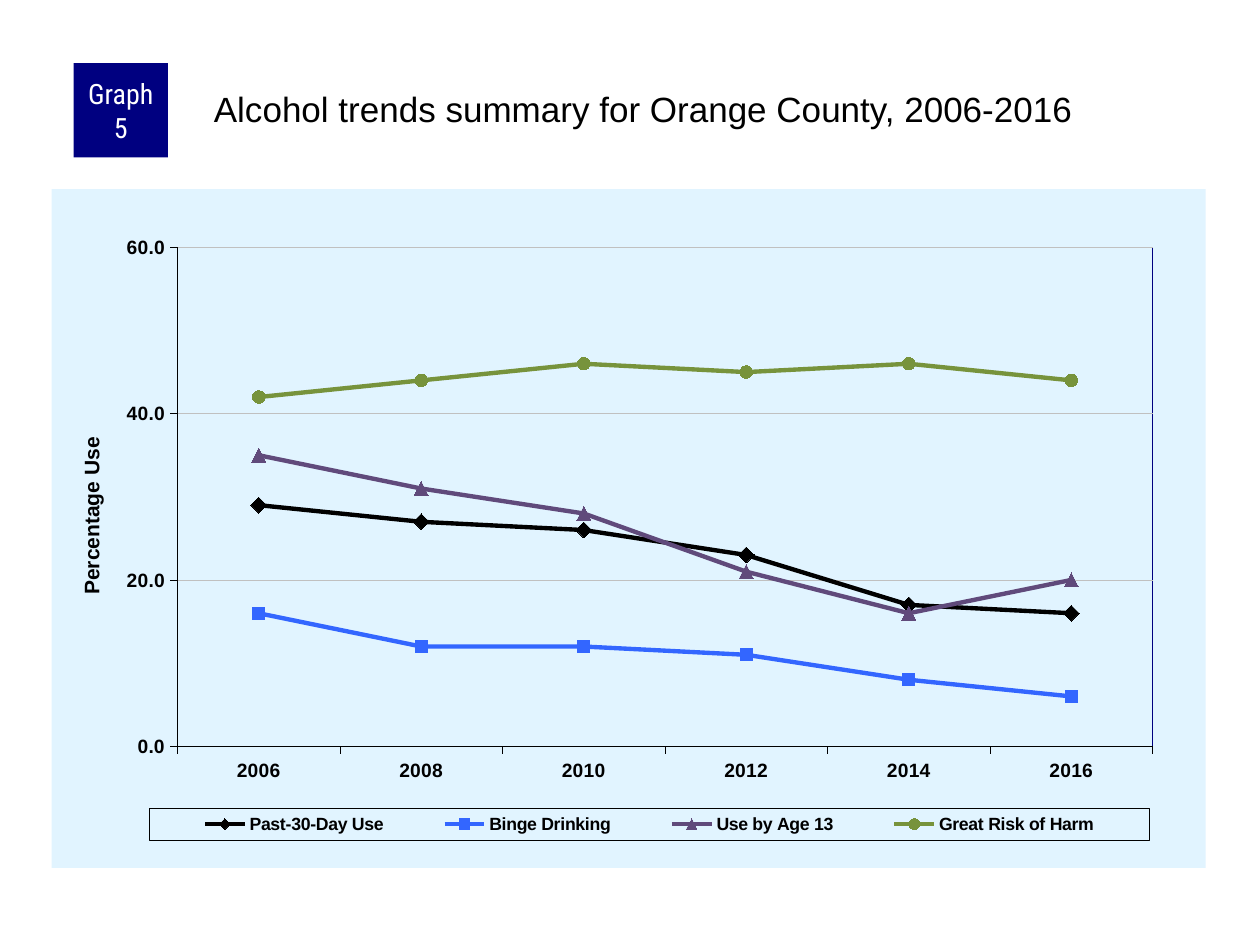
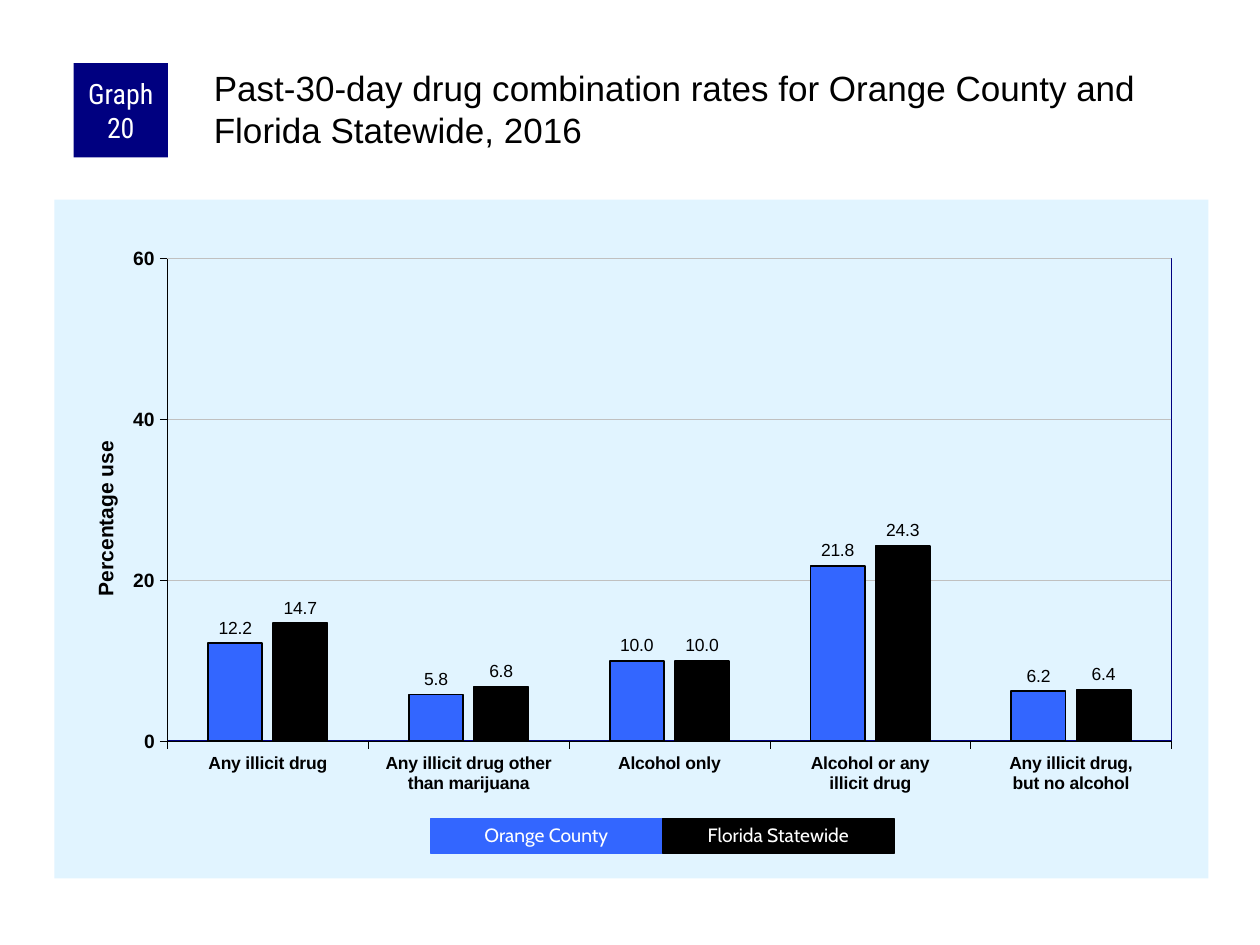
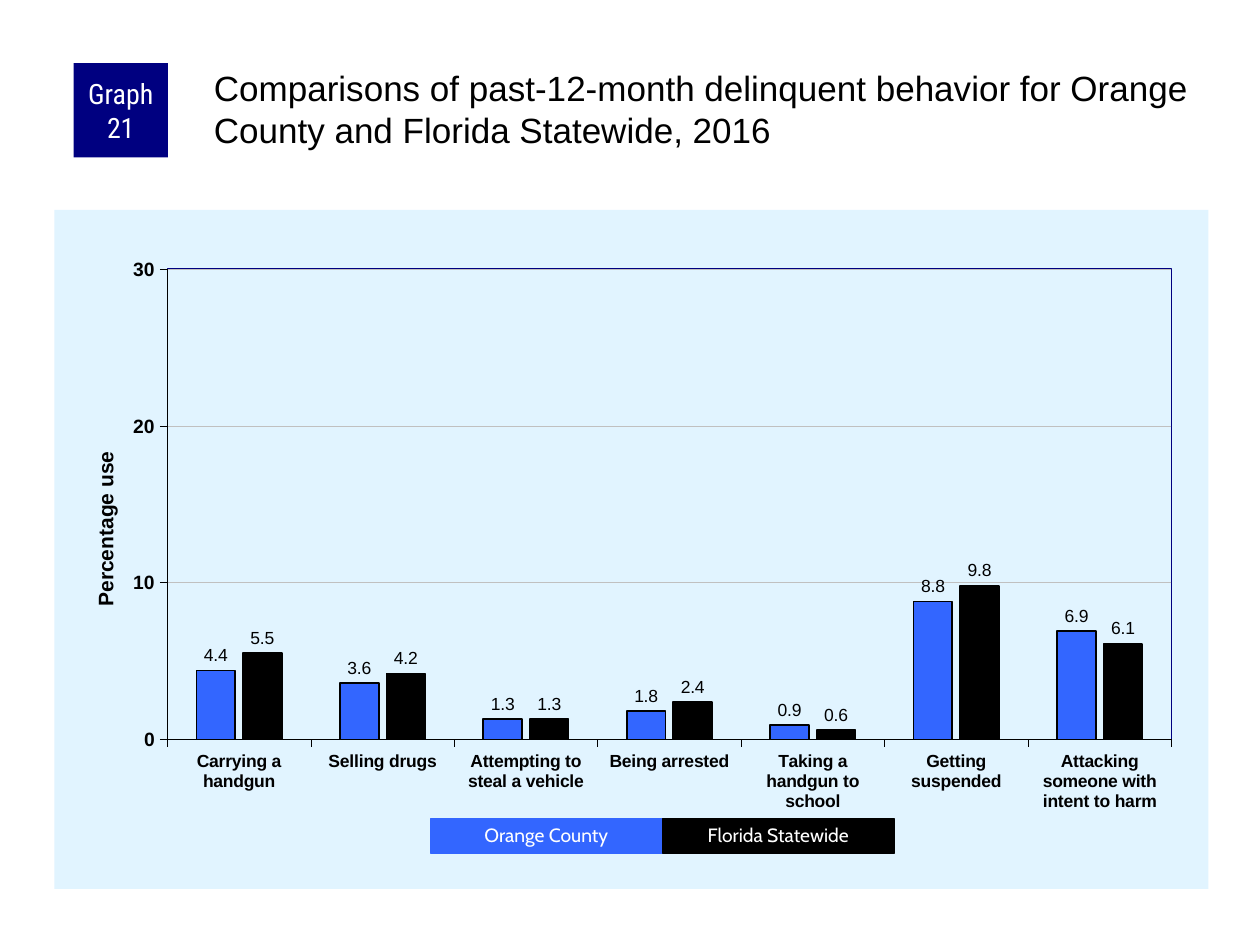
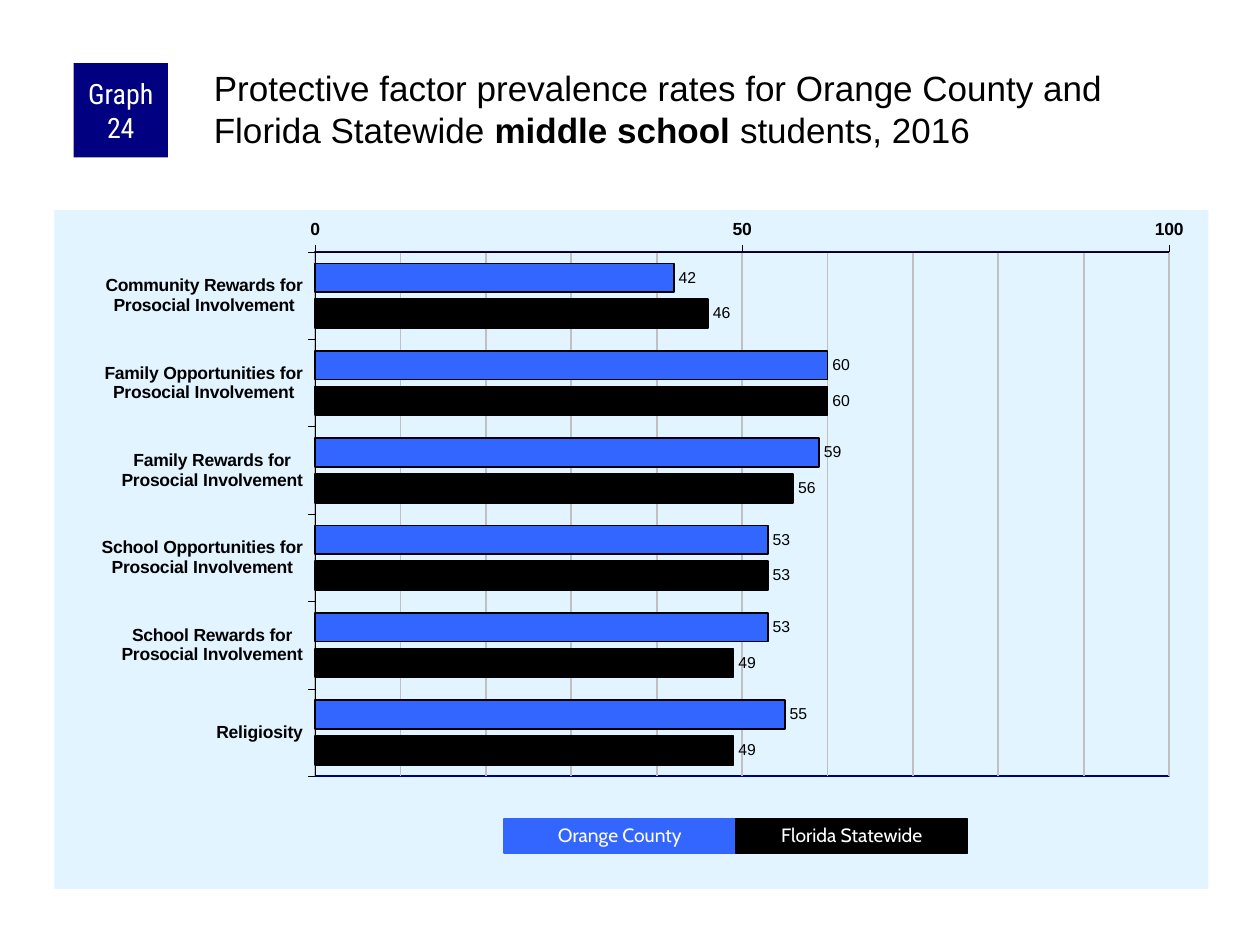
from dataclasses import dataclass
from typing import Optional

from lxml import etree
from pptx import Presentation
from pptx.chart.data import CategoryChartData
from pptx.dml.color import RGBColor
from pptx.enum.chart import (XL_AXIS_CROSSES, XL_CHART_TYPE, XL_LABEL_POSITION,
                             XL_LEGEND_POSITION, XL_MARKER_STYLE, XL_TICK_MARK)
from pptx.enum.shapes import MSO_SHAPE
from pptx.enum.text import MSO_ANCHOR, MSO_AUTO_SIZE, PP_ALIGN
from pptx.oxml import parse_xml
from pptx.oxml.ns import nsdecls, qn
from pptx.util import Pt

LINE, COLUMN, BAR = (XL_CHART_TYPE.LINE_MARKERS, XL_CHART_TYPE.COLUMN_CLUSTERED,
                     XL_CHART_TYPE.BAR_CLUSTERED)
DIAMOND, SQUARE, TRIANGLE, CIRCLE = (XL_MARKER_STYLE.DIAMOND, XL_MARKER_STYLE.SQUARE,
                                     XL_MARKER_STYLE.TRIANGLE, XL_MARKER_STYLE.CIRCLE)
TICK_OUT, TICK_NONE = XL_TICK_MARK.OUTSIDE, XL_TICK_MARK.NONE
OUTSIDE_END = XL_LABEL_POSITION.OUTSIDE_END
LEGEND_BOTTOM = XL_LEGEND_POSITION.BOTTOM
AXIS_MAXIMUM = XL_AXIS_CROSSES.MAXIMUM
RECTANGLE = MSO_SHAPE.RECTANGLE
LEFT, CENTER = PP_ALIGN.LEFT, PP_ALIGN.CENTER
TOP, MIDDLE = MSO_ANCHOR.TOP, MSO_ANCHOR.MIDDLE
NO_FIT, GROW = MSO_AUTO_SIZE.NONE, MSO_AUTO_SIZE.SHAPE_TO_FIT_TEXT
TITLE_ONLY = 5


# Colours, fonts and type sizes
@dataclass(frozen=True)
class Theme:
    navy: str = "000080"
    county: str = "3366FF"
    black: str = "000000"
    white: str = "FFFFFF"
    panel: str = "E1F4FF"
    grid: str = "C0C0C0"
    purple: str = "604A7B"
    green: str = "77933C"
    body_font: str = "Arial"
    badge_font: str = "Roboto Condensed"
    key_font: str = "Cabin"
    title_size: float = 20
    badge_size: float = 16
    key_size: float = 11
    axis_title_size: float = 12
    legend_size: float = 10.1


THEME = Theme()


# What a slide is made of
@dataclass(frozen=True)
class Box:
    left: float
    top: float
    width: float
    height: float

    def lengths(self) -> tuple:
        return Pt(self.left), Pt(self.top), Pt(self.width), Pt(self.height)


@dataclass(frozen=True)
class Series:
    name: str
    values: tuple
    color: str
    marker: Optional[XL_MARKER_STYLE] = None
    marker_size: int = 0


@dataclass(frozen=True)
class Graph:
    kind: XL_CHART_TYPE
    box: Box
    plot: tuple                      # x, y, width, height as shares of the chart
    categories: tuple
    series: tuple
    maximum: float
    major: float
    base_size: float = 11.5
    minor: Optional[float] = None
    axis_title: str = ""
    axis_title_at: tuple = (0.03, 0.35)
    axis_format: str = "General"
    category_size: float = 10
    value_size: float = 11
    grid_width: float = 0.25
    gap: int = 150
    overlap: int = -20
    label_format: str = "0.0"
    label_size: float = 10


@dataclass(frozen=True)
class GraphSlide:
    number: int
    title: tuple                     # (text, bold) runs
    graph: Graph
    title_top: float = 36
    key_left: Optional[float] = None


BADGE = Box(42, 36, 54, 54)
KEY_TOP, KEY_WIDTH, KEY_HEIGHT = 468, 132.5, 19.5
LEGEND_PLACE = (0.085, 0.912, 0.866, 0.047)


def chart_box(left: float, top: float) -> Box:
    return Box(left, top, 659.5, 388)


def county_and_state(county: tuple, state: tuple) -> tuple:
    return (Series("Series 1", county, THEME.county),
            Series("Series 2", state, THEME.black))


SLIDES = (
    GraphSlide(
        5, (("Alcohol trends summary for Orange County, 2006-2016", False),),
        Graph(LINE, chart_box(29.5, 108), (0.109, 0.086, 0.845, 0.735),
              ("2006", "2008", "2010", "2012", "2014", "2016"),
              (Series("Past-30-Day Use", (29, 27, 26, 23, 17, 16), THEME.black, DIAMOND, 9),
               Series("Binge Drinking", (16, 12, 12, 11, 8, 6), THEME.county, SQUARE, 7),
               Series("Use by Age 13", (35, 31, 28, 21, 16, 20), THEME.purple, TRIANGLE, 8),
               Series("Great Risk of Harm", (42, 44, 46, 45, 46, 44), THEME.green, CIRCLE, 7)),
              maximum=60, major=20, base_size=8, axis_title="Percentage Use",
              axis_title_at=(0.02, 0.36), axis_format="0.0", category_size=11),
        title_top=48),
    GraphSlide(
        20, (("Past-30-day drug combination rates for Orange County and "
              "Florida Statewide, 2016", False),),
        Graph(COLUMN, chart_box(31, 114), (0.098, 0.087, 0.87, 0.711),
              ("Any illicit drug", "Any illicit drug other than marijuana", "Alcohol only",
               "Alcohol or any\nillicit drug", "Any illicit drug,\nbut no alcohol"),
              county_and_state((12.2, 5.8, 10, 21.8, 6.2), (14.7, 6.8, 10, 24.3, 6.4)),
              maximum=60, major=20, axis_title="Percentage use"),
        key_left=246),
    GraphSlide(
        21, (("Comparisons of past-12-month delinquent behavior for Orange County and "
              "Florida Statewide, 2016", False),),
        Graph(COLUMN, chart_box(31, 120), (0.098, 0.087, 0.87, 0.693),
              ("Carrying a handgun", "Selling drugs", "Attempting to steal a vehicle",
               "Being arrested", "Taking a handgun to school", "Getting suspended",
               "Attacking someone with intent to harm"),
              county_and_state((4.4, 3.6, 1.3, 1.8, 0.9, 8.8, 6.9),
                               (5.5, 4.2, 1.3, 2.4, 0.6, 9.8, 6.1)),
              maximum=30, major=10, axis_title="Percentage use"),
        key_left=246),
    GraphSlide(
        24, (("Protective factor prevalence rates for Orange County and Florida Statewide ", False),
             ("middle school ", True), ("students, 2016", False)),
        Graph(BAR, chart_box(31, 120), (0.226, 0.062, 0.74, 0.772),
              ("Community Rewards for\nProsocial Involvement",
               "Family Opportunities for\nProsocial Involvement",
               "Family Rewards for\nProsocial Involvement",
               "School Opportunities for\nProsocial Involvement",
               "School Rewards for\nProsocial Involvement", "Religiosity"),
              county_and_state((42, 60, 59, 53, 53, 55), (46, 60, 56, 53, 49, 49)),
              maximum=100, major=50, minor=10, base_size=11.8, value_size=10,
              grid_width=1, gap=80, overlap=-25, label_format="0", label_size=9),
        key_left=288),
)


# Text and shapes
def style_font(font, size: float, color: str = THEME.black, *,
               name: str = THEME.body_font, bold: bool = False) -> None:
    font.size, font.name, font.bold = Pt(size), name, bold
    font.color.rgb = RGBColor.from_string(color)


def write_text(frame, runs: tuple, *, size: float, color: str = THEME.black,
               font: str = THEME.body_font, align: PP_ALIGN = LEFT,
               anchor: MSO_ANCHOR = TOP, insets: tuple = (7.2, 3.6, 7.2, 3.6),
               spacing: float = 1.0, fit: MSO_AUTO_SIZE = NO_FIT) -> None:
    frame.word_wrap, frame.auto_size, frame.vertical_anchor = True, fit, anchor
    (frame.margin_left, frame.margin_top,
     frame.margin_right, frame.margin_bottom) = (Pt(inset) for inset in insets)
    paragraph = frame.paragraphs[0]
    paragraph.alignment, paragraph.line_spacing = align, spacing
    for text, bold in runs:
        run = paragraph.add_run()
        run.text = text
        style_font(run.font, size, color, name=font, bold=bold)


def set_line(line, color: str, width: float) -> None:
    line.color.rgb = RGBColor.from_string(color)
    line.width = Pt(width)


def set_fill(fill, color: str) -> None:
    fill.solid()
    fill.fore_color.rgb = RGBColor.from_string(color)


def add_block(slide, box: Box, fill: str, outlined: bool = False):
    block = slide.shapes.add_shape(RECTANGLE, *box.lengths())
    block.shadow.inherit = False
    set_fill(block.fill, fill)
    if outlined:
        set_line(block.line, fill, 0.75)
    else:
        block.line.fill.background()
    return block


def add_heading(slide, content: GraphSlide) -> None:
    badge = add_block(slide, BADGE, THEME.navy)
    write_text(badge.text_frame, ((f"Graph {content.number}", False),), size=THEME.badge_size,
               color=THEME.white, font=THEME.badge_font, align=CENTER, anchor=MIDDLE,
               insets=(3.6, 0, 3.6, 0))
    title = slide.shapes.title
    title.left, title.top, title.width, title.height = Box(
        120, content.title_top, 570, 60).lengths()
    write_text(title.text_frame, content.title, size=THEME.title_size, insets=(2.2, 2.2, 0, 0))


def add_key(slide, left: float) -> None:
    entries = (("Orange County", THEME.county), ("Florida Statewide", THEME.black))
    for index, (label, color) in enumerate(entries):
        entry = add_block(slide, Box(left + index * KEY_WIDTH, KEY_TOP, KEY_WIDTH, KEY_HEIGHT),
                          color, outlined=True)
        write_text(entry.text_frame, ((label, False),), size=THEME.key_size, color=THEME.white,
                   font=THEME.key_font, align=CENTER, anchor=MIDDLE, spacing=0.9, fit=GROW)


# Chart XML that has no public method
def set_layout(parent, index: int, place: tuple, inner: bool = False) -> None:
    previous = parent.find(qn("c:layout"))
    if previous is not None:
        parent.remove(previous)
    layout = parse_xml(f"<c:layout {nsdecls('c')}><c:manualLayout/></c:layout>")
    settings = [("layoutTarget", "inner")] if inner else []
    settings += [("xMode", "edge"), ("yMode", "edge"), *zip("xywh", place)]
    for tag, value in settings:
        etree.SubElement(layout[0], qn(f"c:{tag}")).set("val", str(value))
    parent.insert(index, layout)


def frame_format(fill: Optional[str], line: Optional[str], width: float = 1):
    def paint(color: Optional[str]) -> str:
        return (f'<a:solidFill><a:srgbClr val="{color}"/></a:solidFill>'
                if color else "<a:noFill/>")
    return parse_xml(f'<c:spPr {nsdecls("c", "a")}>{paint(fill)}'
                     f'<a:ln w="{int(Pt(width))}">{paint(line)}</a:ln></c:spPr>')


# Chart parts
def format_axis(axis, size: float) -> None:
    axis.major_tick_mark, axis.minor_tick_mark = TICK_OUT, TICK_NONE
    style_font(axis.tick_labels.font, size, bold=True)
    set_line(axis.format.line, THEME.black, 0.25)


def format_value_axis(axis, graph: Graph) -> None:
    format_axis(axis, graph.value_size)
    axis.minimum_scale, axis.maximum_scale, axis.major_unit = 0, graph.maximum, graph.major
    axis.tick_labels.number_format = graph.axis_format
    axis.tick_labels.number_format_is_linked = False
    axis.has_major_gridlines = True
    set_line(axis.major_gridlines.format.line, THEME.grid, graph.grid_width)
    if graph.minor:
        axis.minor_unit = graph.minor
        axis.has_minor_gridlines = True
        minor_gridlines = axis._element.find(qn("c:minorGridlines"))
        minor_gridlines.append(frame_format(None, THEME.grid, graph.grid_width))
    axis.has_title = bool(graph.axis_title)
    if graph.axis_title:
        run = axis.axis_title.text_frame.paragraphs[0].add_run()
        run.text = graph.axis_title
        style_font(run.font, THEME.axis_title_size, bold=True)
        set_layout(axis.axis_title._element, 1, graph.axis_title_at)


def format_lines(chart, graph: Graph) -> None:
    for line, series in zip(chart.plots[0].series, graph.series):
        line.smooth = False
        set_line(line.format.line, series.color, 2.5)
        line.marker.style, line.marker.size = series.marker, series.marker_size
        set_fill(line.marker.format.fill, series.color)
        set_line(line.marker.format.line, series.color, 0.75)
    chart.has_legend = True
    legend = chart.legend
    legend.position, legend.include_in_layout = LEGEND_BOTTOM, False
    style_font(legend.font, THEME.legend_size, bold=True)
    set_layout(legend._element, 1, LEGEND_PLACE)
    legend._element.find(qn("c:txPr")).addprevious(frame_format(None, THEME.black, 0.25))


def format_bars(chart, graph: Graph) -> None:
    plot = chart.plots[0]
    plot.gap_width, plot.overlap = graph.gap, graph.overlap
    for bars, series in zip(plot.series, graph.series):
        bars.invert_if_negative = False
        set_fill(bars.format.fill, series.color)
        set_line(bars.format.line, THEME.black, 1)
        labels = bars.data_labels
        labels.show_value, labels.position = True, OUTSIDE_END
        labels.number_format, labels.number_format_is_linked = graph.label_format, False
        style_font(labels.font, graph.label_size)


def add_graph(slide, graph: Graph) -> None:
    data = CategoryChartData()
    data.categories = graph.categories
    for series in graph.series:
        data.add_series(series.name, series.values)
    chart = slide.shapes.add_chart(graph.kind, *graph.box.lengths(), data).chart
    chart.has_title = chart.has_legend = False
    style_font(chart.font, graph.base_size)
    chart.plots[0].vary_by_categories = False

    # Pale panel behind the chart, navy frame around the plot
    chart_part = chart._chartSpace.find(qn("c:chart"))
    chart_part.addnext(frame_format(THEME.panel, None))
    plot_area = chart_part.find(qn("c:plotArea"))
    set_layout(plot_area, 0, graph.plot, inner=True)
    plot_area.append(frame_format(None, THEME.navy))

    format_axis(chart.category_axis, graph.category_size)
    format_value_axis(chart.value_axis, graph)
    if graph.kind == LINE:
        format_lines(chart, graph)
    else:
        format_bars(chart, graph)
    if graph.kind == BAR:
        chart.category_axis.reverse_order = True
        chart.category_axis.crosses = AXIS_MAXIMUM


def main() -> None:
    deck = Presentation()
    deck.slide_width, deck.slide_height = Pt(720), Pt(540)
    for content in SLIDES:
        slide = deck.slides.add_slide(deck.slide_layouts[TITLE_ONLY])
        add_graph(slide, content.graph)
        add_heading(slide, content)
        if content.key_left is not None:
            add_key(slide, content.key_left)
    deck.save("out.pptx")


if __name__ == "__main__":
    main()
